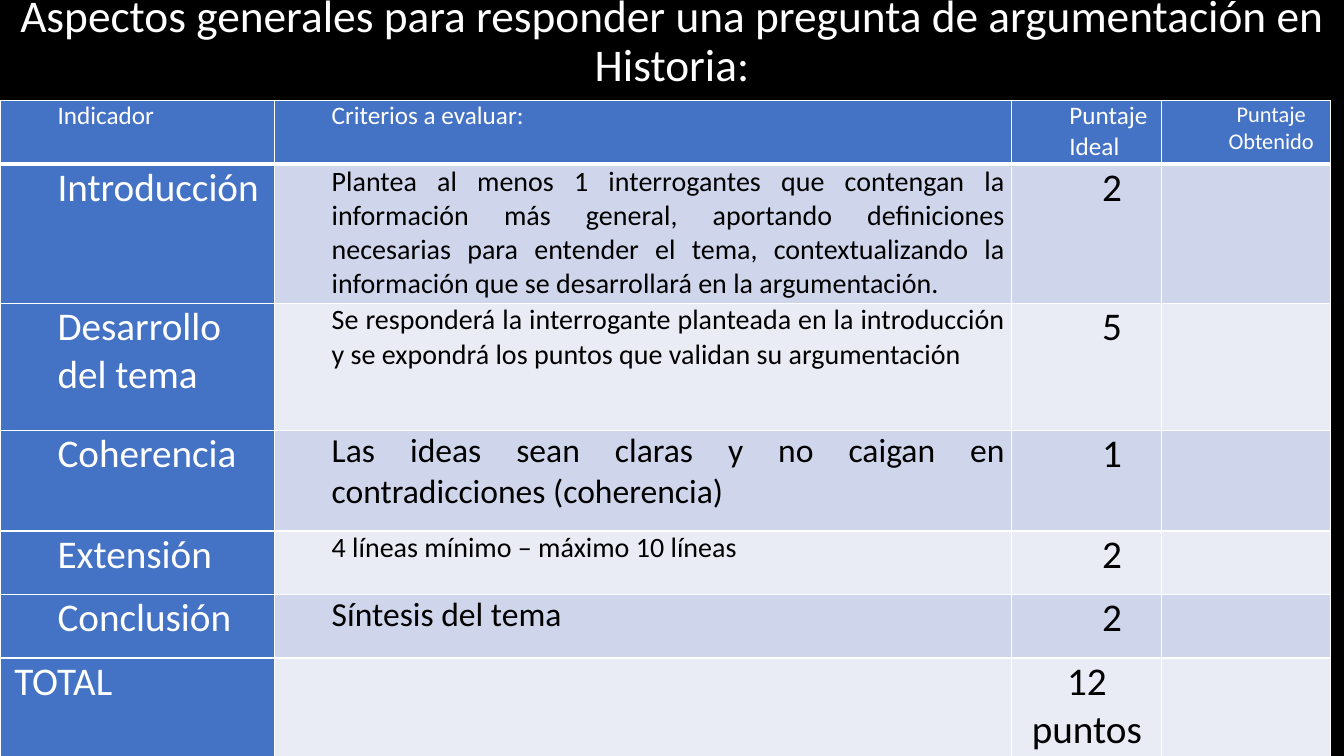
from lxml.etree import fromstring
from pptx import Presentation
from pptx.dml.color import RGBColor
from pptx.enum.text import MSO_ANCHOR, MSO_AUTO_SIZE, PP_ALIGN as Align
from pptx.util import Cm, Pt

NS = "http://schemas.openxmlformats.org/drawingml/2006/main"
WHITE, BLACK, BLUE = "FFFFFF", "000000", "4472C4"
BANDS = ["E9EBF5", "CFD5EA"]
LEFT, MID, JUST = Align.LEFT, Align.CENTER, Align.JUSTIFY


def paint(fill, tint):
    fill.solid()
    fill.fore_color.rgb = RGBColor.from_string(tint)


def write(frame, text, size=28, tint=WHITE, align=LEFT, indent=0, space=1.0):
    """Put one formatted paragraph into a text frame; indent is in cm."""
    par = frame.paragraphs[0]
    par.alignment = align
    par.line_spacing = space
    props = par._p.get_or_add_pPr()
    props.set("marL", str(Cm(indent)))
    props.set("indent", "0")
    run = par.add_run()
    run.text = text
    run.font.name = "Calibri"
    run.font.size = Pt(size)
    run.font.bold = False
    paint(run.font.fill, tint)


deck = Presentation()
deck.slide_width, deck.slide_height = Cm(33.87), Cm(19.05)
slide = deck.slides.add_slide(deck.slide_layouts[5])
paint(slide.background.fill, BLACK)

title = slide.shapes.title
title.left, title.top, title.width, title.height = Cm(0), Cm(0), Cm(33.87), Cm(2.13)
frame = title.text_frame
frame.word_wrap = True
frame.auto_size = MSO_AUTO_SIZE.NONE
frame.vertical_anchor = MSO_ANCHOR.MIDDLE
write(frame, "Aspectos generales para responder una pregunta de argumentación en Historia:",
      size=32.4, align=MID, space=0.9)

# Each row: indicator, criterion, its size and alignment, ideal score
rows = [
    ("Introducción", "Plantea al menos 1 interrogantes que contengan la información más "
     "general, aportando definiciones necesarias para entender el tema, contextualizando "
     "la información que se desarrollará en la argumentación.", 20, JUST, "2"),
    ("Desarrollo del tema", "Se responderá la interrogante planteada en la introducción "
     "y se expondrá los puntos que validan su argumentación", 20, JUST, "5"),
    ("Coherencia", "Las ideas sean claras y no caigan en contradicciones (coherencia)",
     24, JUST, "1"),
    ("Extensión", "4 líneas mínimo – máximo 10 líneas", 20, JUST, "2"),
    ("Conclusión", "Síntesis del tema", 24, LEFT, "2"),
    ("TOTAL", "", 20, LEFT, "12 puntos"),
]
heads = [("Indicador", 18, LEFT), ("Criterios a evaluar:", 18, LEFT),
         ("Puntaje Ideal", 18, LEFT), ("Puntaje Obtenido", 16, MID)]
widths = [6.91, 18.59, 3.78, 4.24]
heights = [1.6, 3.5, 3.2, 2.54, 1.6, 1.6, 2.49]

grid = slide.shapes.add_table(len(heights), len(widths), Cm(0), Cm(2.54),
                              Cm(sum(widths)), Cm(sum(heights))).table
for col, width in zip(grid.columns, widths):
    col.width = Cm(width)
for row, height in zip(grid.rows, heights):
    row.height = Cm(height)

for r in range(len(heights)):
    for c in range(len(widths)):
        cell = grid.cell(r, c)
        paint(cell.fill, BLUE if r == 0 or c == 0 else BANDS[r % 2])
        cell.margin_left = cell.margin_right = Cm(0.18)
        cell.margin_top = cell.margin_bottom = Cm(0)
        props = cell._tc.get_or_add_tcPr()
        for k, side in enumerate("LRTB"):
            wide = Pt(3 if (r, side) in [(0, "B"), (1, "T")] else 1)
            props.insert(k, fromstring(
                f'<a:ln{side} xmlns:a="{NS}" w="{wide}"><a:solidFill>'
                f'<a:srgbClr val="{WHITE}"/></a:solidFill></a:ln{side}>'))

for c, (text, size, align) in enumerate(heads):
    write(grid.cell(0, c).text_frame, text, size=size, align=align, indent=1.27)

for r, (label, rule, size, align, score) in enumerate(rows, 1):
    total = label == "TOTAL"
    write(grid.cell(r, 0).text_frame, label, indent=0.18 if total else 1.27)
    if rule:
        write(grid.cell(r, 1).text_frame, rule, size=size, tint=BLACK,
              align=align, indent=1.27)
    write(grid.cell(r, 2).text_frame, score, tint=BLACK, align=MID,
          indent=0 if total else 1.27)

deck.save("out.pptx")
